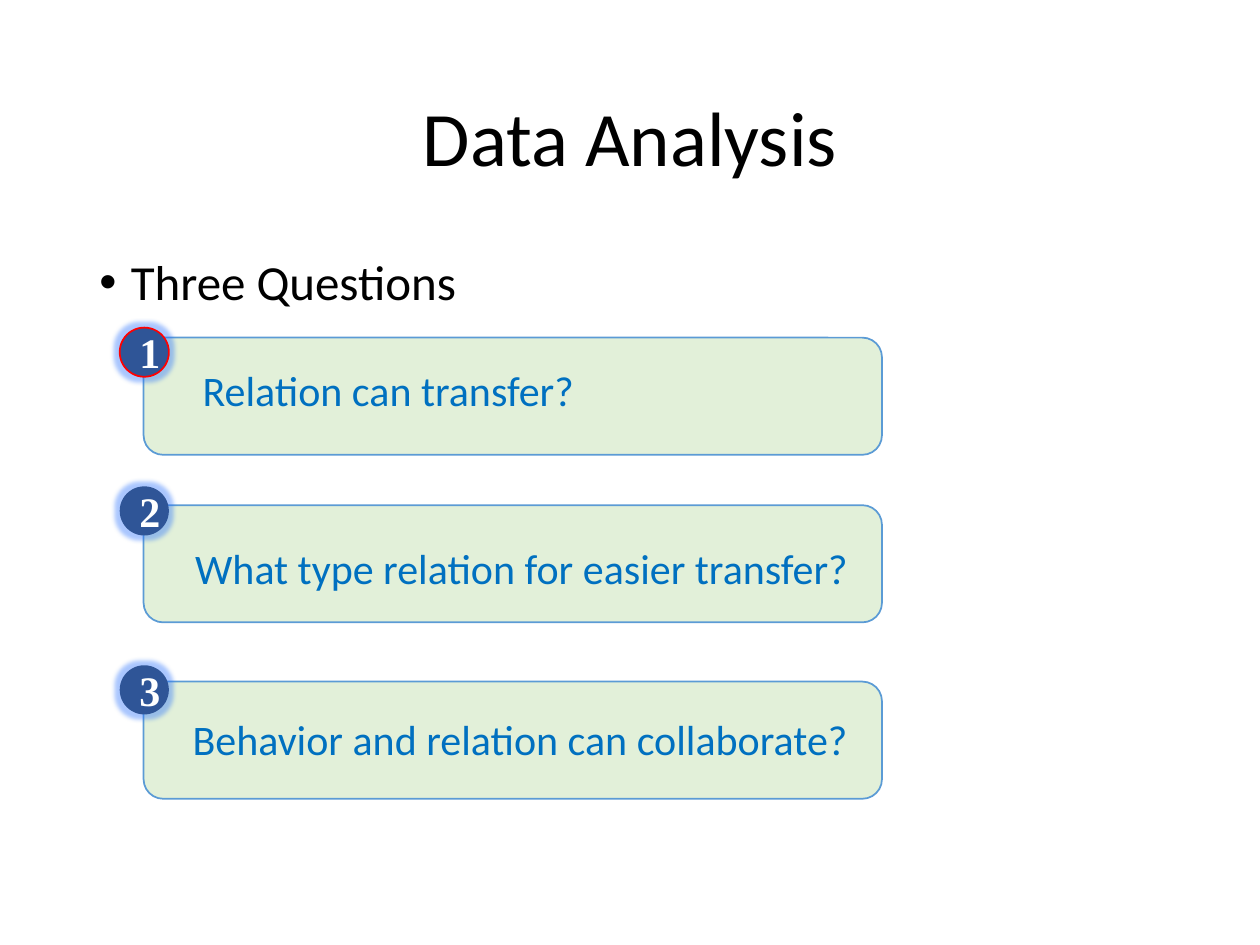
from lxml.etree import SubElement
from pptx import Presentation
from pptx.dml.color import RGBColor
from pptx.enum.shapes import MSO_SHAPE
from pptx.enum.text import MSO_ANCHOR, PP_ALIGN
from pptx.oxml.ns import qn
from pptx.util import Inches, Pt

TITLE = "Data Analysis"
LEAD = "Three Questions"
# question, box top, text left, text top, text height, badge top, badge line
ITEMS = [
    ("Relation can transfer?", 2.68, 1.01, 2.89, 0.62, 2.6, "red"),
    ("What type relation for easier transfer?", 4.01, 0.95, 4.3, 0.9, 3.86, None),
    ("Behavior and relation can collaborate?", 5.41, 0.93, 5.66, 1.3, 5.28, None),
]
HUES = {"black": "000000", "white": "FFFFFF", "green": "E2F0D9", "edge": "5B9BD5",
        "blue": "0070C0", "navy": "2F5597", "red": "FF0000", "glow": "2A72FF"}
WIDE = 8.62


def hue(name):
    """Return the named colour."""
    return RGBColor.from_string(HUES[name])


def write(frame, text, size, color, font="Calibri", bold=False):
    """Write one run and return its paragraph."""
    frame.word_wrap = True
    para = frame.paragraphs[0]
    run = para.add_run()
    run.text = text
    run.font.size, run.font.name, run.font.bold = Pt(size), font, bold
    run.font.color.rgb = hue(color)
    return para


def draw(slide, kind, spot, fill, line):
    """Draw a flat filled shape with an optional outline."""
    shape = slide.shapes.add_shape(kind, *map(Inches, spot))
    shape.shadow.inherit = False
    shape.fill.solid()
    shape.fill.fore_color.rgb = hue(fill)
    if line:
        shape.line.color.rgb = hue(line)
        shape.line.width = Pt(1)
    else:
        shape.line.fill.background()
    return shape


def glow(shape):
    """Add a soft glow around a shape."""
    effects = shape.element.spPr.find(qn("a:effectLst"))
    halo = SubElement(effects, qn("a:glow"), rad=str(Inches(0.07)))
    tint = SubElement(halo, qn("a:srgbClr"), val=HUES["glow"])
    SubElement(tint, qn("a:alpha"), val="40000")


def label(slide, spot, text, size, color, gap, left, hang=0):
    """Add an indented line of text, with a bullet if it hangs."""
    box = slide.shapes.add_textbox(*map(Inches, spot))
    para = write(box.text_frame, text, size, color)
    para.line_spacing, para.space_before = 0.9, Pt(gap)
    props = para._p.get_or_add_pPr()
    props.set("marL", str(Inches(left)))
    props.set("indent", str(Inches(-hang)))
    if hang:
        SubElement(props, qn("a:buFont"), typeface="Arial")
        SubElement(props, qn("a:buChar"), char="•")


def main():
    """Build and save the slide."""
    deck = Presentation()
    deck.slide_width, deck.slide_height = Inches(10), Inches(7.5)
    slide = deck.slides.add_slide(deck.slide_layouts[5])

    title = slide.shapes.title
    title.left, title.top, title.width, title.height = map(Inches, (0.69, 0.4, WIDE, 1.45))
    title.text_frame.vertical_anchor = MSO_ANCHOR.MIDDLE
    para = write(title.text_frame, TITLE, 44, "black")
    para.alignment, para.line_spacing = PP_ALIGN.CENTER, 0.9
    label(slide, (0.69, 2, WIDE, 0.69), LEAD, 28, "black", 10, 0.25, 0.25)

    for num, (text, top, left, high, tall, peak, line) in enumerate(ITEMS, 1):
        draw(slide, MSO_SHAPE.ROUNDED_RECTANGLE, (1.14, top, 5.86, 0.93), "green", "edge")
        label(slide, (left, high, WIDE, tall), text, 24, "blue", 5, 0.5)
        badge = draw(slide, MSO_SHAPE.FLOWCHART_CONNECTOR, (0.95, peak, 0.39, 0.39), "navy", line)
        glow(badge)
        badge.text_frame.vertical_anchor = MSO_ANCHOR.MIDDLE
        para = write(badge.text_frame, str(num), 24, "white", "Times New Roman", True)
        para.alignment = PP_ALIGN.CENTER

    deck.save("out.pptx")


if __name__ == "__main__":
    main()
